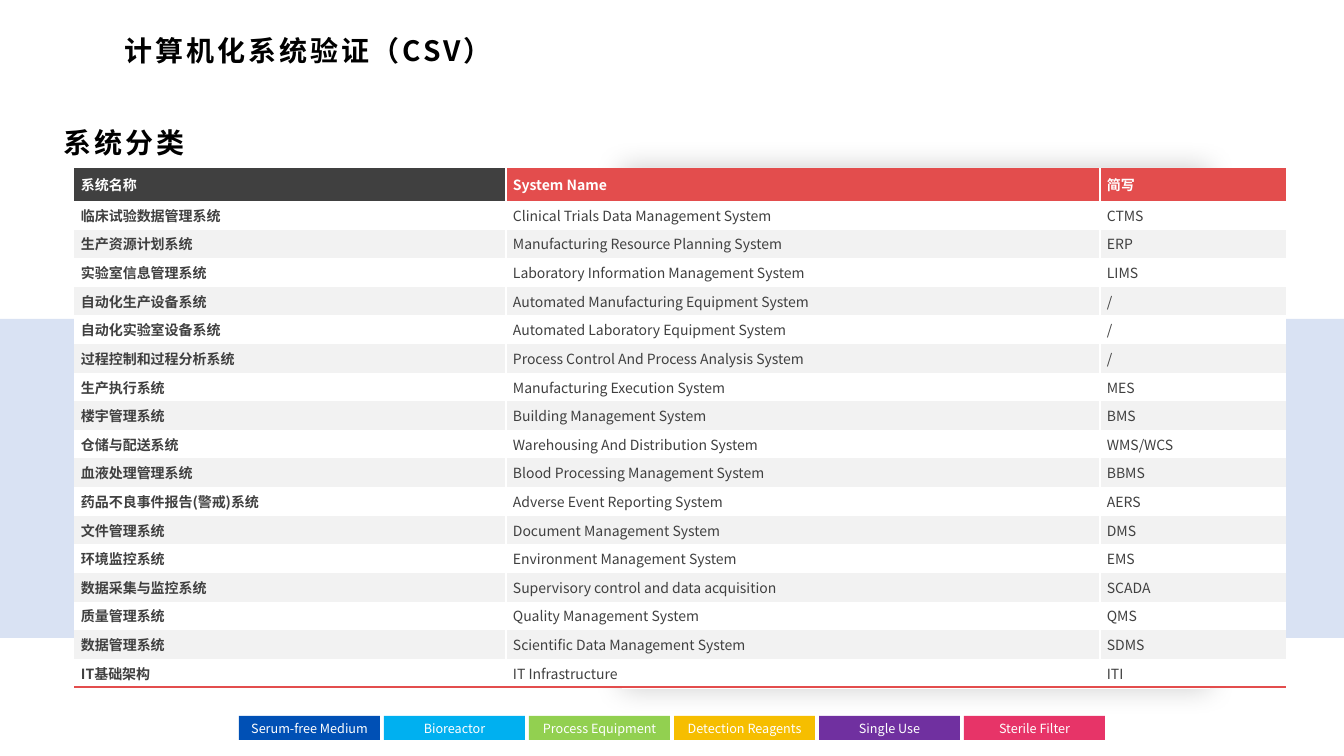
import pptx
import pptx.dml.color
import pptx.enum.shapes
import pptx.enum.text
import pptx.oxml
import pptx.oxml.ns
import pptx.util

RGBColor = pptx.dml.color.RGBColor
ALIGN = pptx.enum.text.PP_ALIGN
qn = pptx.oxml.ns.qn

EMU_PER_PX = 914400 / 100.8
FONT = "Noto Sans CJK SC"
NO_STYLE = "{2D5ABB26-0587-4C30-8999-92F81FD0307C}"

WHITE = RGBColor(0xFF, 0xFF, 0xFF)
BLACK = RGBColor(0x00, 0x00, 0x00)
CHARCOAL = RGBColor(0x40, 0x40, 0x40)
STRIPE = RGBColor(0xF2, 0xF2, 0xF2)
RED = RGBColor(0xE3, 0x4D, 0x4D)
BAND_BLUE = RGBColor(0x44, 0x72, 0xC4)

PRODUCTS = [
    ("Serum-free Medium", RGBColor(0x00, 0x50, 0xB5)),
    ("Bioreactor", RGBColor(0x00, 0xB0, 0xF0)),
    ("Process Equipment", RGBColor(0x92, 0xD0, 0x50)),
    ("Detection Reagents", RGBColor(0xF6, 0xBE, 0x00)),
    ("Single Use", RGBColor(0x70, 0x30, 0xA0)),
    ("Sterile Filter", RGBColor(0xE7, 0x34, 0x68)),
]

SYSTEMS = [
    ("系统名称", "System Name", "简写"),
    ("临床试验数据管理系统", "Clinical Trials Data Management System", "CTMS"),
    ("生产资源计划系统", "Manufacturing Resource Planning System", "ERP"),
    ("实验室信息管理系统", "Laboratory Information Management System", "LIMS"),
    ("自动化生产设备系统", "Automated Manufacturing Equipment System", "/"),
    ("自动化实验室设备系统", "Automated Laboratory Equipment System", "/"),
    ("过程控制和过程分析系统", "Process Control And Process Analysis System", "/"),
    ("生产执行系统", "Manufacturing Execution System", "MES"),
    ("楼宇管理系统", "Building Management System", "BMS"),
    ("仓储与配送系统", "Warehousing And Distribution System", "WMS/WCS"),
    ("血液处理管理系统", "Blood Processing Management System", "BBMS"),
    ("药品不良事件报告(警戒)系统", "Adverse Event Reporting System", "AERS"),
    ("文件管理系统", "Document Management System", "DMS"),
    ("环境监控系统", "Environment Management System", "EMS"),
    ("数据采集与监控系统", "Supervisory control and data acquisition", "SCADA"),
    ("质量管理系统", "Quality Management System", "QMS"),
    ("数据管理系统", "Scientific Data Management System", "SDMS"),
    ("IT基础架构", "IT Infrastructure", "ITI"),
]
COLUMN_WIDTHS = (432, 594, 186)
HEADER_HEIGHT = 33
BODY_HEIGHT = 487


def px(length):
    return pptx.util.Emu(round(length * EMU_PER_PX))


def write_text(frame, text, *, size, color, bold=False, align=ALIGN.LEFT, spacing=0):
    """Fill a text frame with one formatted run; spacing is in points."""
    paragraph = frame.paragraphs[0]
    paragraph.alignment = align
    run = paragraph.add_run()
    run.text = text
    run.font.size = pptx.util.Pt(size)
    run.font.bold = bold
    run.font.color.rgb = color
    run.font.name = FONT
    properties = run.font._element if hasattr(run.font, "_element") else run._r.get_or_add_rPr()
    pptx.oxml.ns  # namespace helpers are shared with the border code
    east_asian = properties.makeelement(qn("a:ea"), {"typeface": FONT})
    properties.find(qn("a:latin")).addnext(east_asian)
    if spacing:
        properties.set("spc", str(spacing * 100))


def add_block(slide, left, top, width, height, fill):
    block = slide.shapes.add_shape(
        pptx.enum.shapes.MSO_SHAPE.RECTANGLE, px(left), px(top), px(width), px(height))
    block.shadow.inherit = False
    block.fill.solid()
    block.fill.fore_color.rgb = fill
    block.line.fill.background()
    return block


def set_opacity(block, percent):
    color = block.element.spPr.find(qn("a:solidFill"))[0]
    color.append(color.makeelement(qn("a:alpha"), {"val": str(percent * 1000)}))


def add_glow_shadow(block, blur, percent):
    """Give the block a soft black shadow on all sides; blur is in points."""
    effects = block.element.spPr.find(qn("a:effectLst"))
    effects.append(pptx.oxml.parse_xml(
        f'<a:outerShdw {pptx.oxml.ns.nsdecls("a")} blurRad="{pptx.util.Pt(blur)}" dist="0" '
        f'dir="5400000" algn="ctr" rotWithShape="0"><a:srgbClr val="000000">'
        f'<a:alpha val="{percent * 1000}"/></a:srgbClr></a:outerShdw>'))


def add_heading(slide, left, top, text):
    heading = slide.shapes.add_textbox(px(left), px(top), px(735), px(67))
    frame = heading.text_frame
    frame.word_wrap = True
    frame.vertical_anchor = pptx.enum.text.MSO_ANCHOR.MIDDLE
    frame.margin_left = frame.margin_right = px(7)
    frame.margin_top = frame.margin_bottom = px(3)
    write_text(frame, text, size=20, color=BLACK, bold=True, spacing=2)


def add_product_chip(slide, left, name, fill):
    chip = add_block(slide, left, 716, 141, 24, fill)
    frame = chip.text_frame
    frame.word_wrap = True
    frame.vertical_anchor = pptx.enum.text.MSO_ANCHOR.MIDDLE
    frame.margin_left = frame.margin_right = 0
    frame.margin_top = frame.margin_bottom = 0
    write_text(frame, name, size=9, color=WHITE, align=ALIGN.CENTER)


def set_borders(cell, borders):
    """Draw 1.5 pt borders, given as (side, colour) in the order L, R, T, B."""
    properties = cell._tc.get_or_add_tcPr()
    for position, (side, color) in enumerate(borders):
        properties.insert(position, pptx.oxml.parse_xml(
            f'<a:ln{side} {pptx.oxml.ns.nsdecls("a")} w="{pptx.util.Pt(1.5)}">'
            f'<a:solidFill><a:srgbClr val="{color}"/></a:solidFill></a:ln{side}>'))


def format_cell(cell, row, column):
    last_row, last_column = len(SYSTEMS) - 1, len(COLUMN_WIDTHS) - 1
    is_header = row == 0
    if is_header:
        fill = CHARCOAL if column == 0 else RED
    else:
        fill = WHITE if row % 2 else STRIPE
    cell.fill.solid()
    cell.fill.fore_color.rgb = fill
    cell.vertical_anchor = pptx.enum.text.MSO_ANCHOR.MIDDLE
    cell.margin_left = cell.margin_right = px(7)
    cell.margin_top = cell.margin_bottom = 0
    write_text(cell.text_frame, SYSTEMS[row][column], size=10,
               color=WHITE if is_header else CHARCOAL, bold=is_header or column == 0)
    borders = []
    if column > 0:
        borders.append(("L", WHITE))
    if column < last_column:
        borders.append(("R", WHITE))
    if row == last_row:
        borders.append(("B", RED))
    set_borders(cell, borders)


def add_system_table(slide, left, top):
    frame = slide.shapes.add_table(
        len(SYSTEMS), len(COLUMN_WIDTHS), px(left), px(top),
        px(sum(COLUMN_WIDTHS)), px(HEADER_HEIGHT + BODY_HEIGHT))
    table = frame.table
    table.horz_banding = False
    next(frame.element.iter(qn("a:tableStyleId"))).text = NO_STYLE
    for column, width in zip(table.columns, COLUMN_WIDTHS):
        column.width = px(width)
    for index, row in enumerate(table.rows):
        row.height = px(BODY_HEIGHT / (len(SYSTEMS) - 1)) if index else px(HEADER_HEIGHT)
        for column, cell in enumerate(row.cells):
            format_cell(cell, index, column)


def main():
    presentation = pptx.Presentation()
    presentation.slide_width = px(1344)
    presentation.slide_height = px(756)
    slide = presentation.slides.add_slide(presentation.slide_layouts[6])

    for index, (name, fill) in enumerate(PRODUCTS):
        add_product_chip(slide, 239 + 145 * index, name, fill)
    band = add_block(slide, 0, 319, 1344, 319, BAND_BLUE)
    set_opacity(band, 20)
    card = add_block(slide, 622, 168, 588, 521, WHITE)
    add_glow_shadow(card, blur=20, percent=20)
    add_heading(slide, 118, 17, "计算机化系统验证（CSV）")
    add_system_table(slide, 74, 168)
    add_heading(slide, 57, 109, "系统分类")
    presentation.save("out.pptx")


if __name__ == "__main__":
    main()
